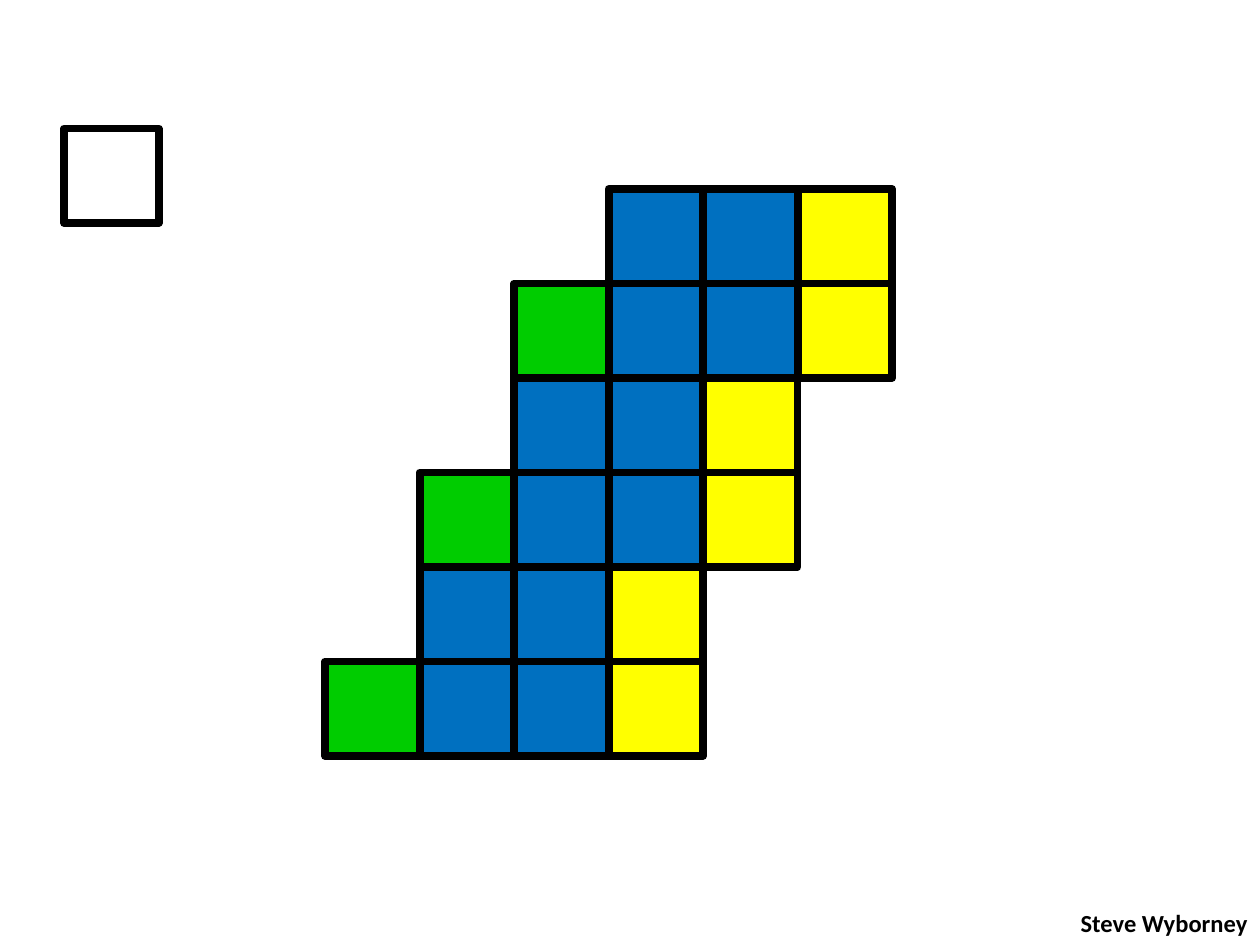
from pptx import Presentation
from pptx.dml.color import RGBColor
from pptx.enum.shapes import MSO_SHAPE
from pptx.enum.text import MSO_ANCHOR, MSO_AUTO_SIZE, PP_ALIGN
from pptx.util import Pt

RECT = MSO_SHAPE.RECTANGLE
RIGHT = PP_ALIGN.RIGHT
TOP = MSO_ANCHOR.TOP
GROW = MSO_AUTO_SIZE.SHAPE_TO_FIT_TEXT

BLACK = RGBColor(0x00, 0x00, 0x00)
WHITE = RGBColor(0xFF, 0xFF, 0xFF)
BLUE = RGBColor(0x00, 0x70, 0xC0)
GREEN = RGBColor(0x00, 0xCC, 0x00)
YELLOW = RGBColor(0xFF, 0xFF, 0x00)

EMU_PER_PX = 9144
CELL = 75
STEPS = 3
LEFT, BOTTOM_STEP_TOP = 258, 450
THIN, THICK = 2, 4.5


def px(n):
    return n * EMU_PER_PX


class Board:
    font = "Calibri"
    font_size = 14

    def __init__(self, slide):
        self.slide = slide

    def group(self):
        return self.slide.shapes.add_group_shape()

    def rect(self, parent, x, y, w, h, weight, color=None):
        s = parent.shapes.add_shape(RECT, px(x), px(y), px(w), px(h))
        s.shadow.inherit = False
        if color is None:
            s.fill.background()
        else:
            s.fill.solid()
            s.fill.fore_color.rgb = color
        s.line.color.rgb = BLACK
        s.line.width = Pt(weight)

    def text(self, x, y, w, h, words):
        tf = self.slide.shapes.add_textbox(px(x), px(y), px(w), px(h)).text_frame
        tf.word_wrap = False
        tf.auto_size = GROW
        tf.vertical_anchor = TOP
        tf.text = words
        p = tf.paragraphs[0]
        p.alignment = RIGHT
        font = p.runs[0].font
        font.name = self.font
        font.size = Pt(self.font_size)
        font.bold = True
        font.color.rgb = BLACK


def main():
    prs = Presentation()
    prs.slide_width, prs.slide_height = px(1000), px(750)
    slide = prs.slides.add_slide(prs.slide_layouts[6])
    board = Board(slide)

    board.rect(slide, 51, 102, CELL, CELL, THICK, WHITE)

    corners = [(LEFT + i * CELL, BOTTOM_STEP_TOP - 2 * i * CELL)
               for i in range(STEPS)]

    tiles = board.group()
    for x, y in corners:
        board.rect(tiles, x + CELL, y, 2 * CELL, 2 * CELL, THIN, BLUE)
        board.rect(tiles, x, y + CELL, CELL, CELL, THIN, GREEN)
        board.rect(tiles, x + 3 * CELL, y, CELL, 2 * CELL, THIN, YELLOW)

    grid = board.group()
    for x, y in corners:
        for row, first_col in enumerate((1, 0)):
            for col in range(first_col, 4):
                board.rect(grid, x + col * CELL, y + row * CELL,
                           CELL, CELL, THICK)

    board.text(847, 716, 153, 34, "Steve Wyborney")
    prs.save("out.pptx")


if __name__ == "__main__":
    main()
